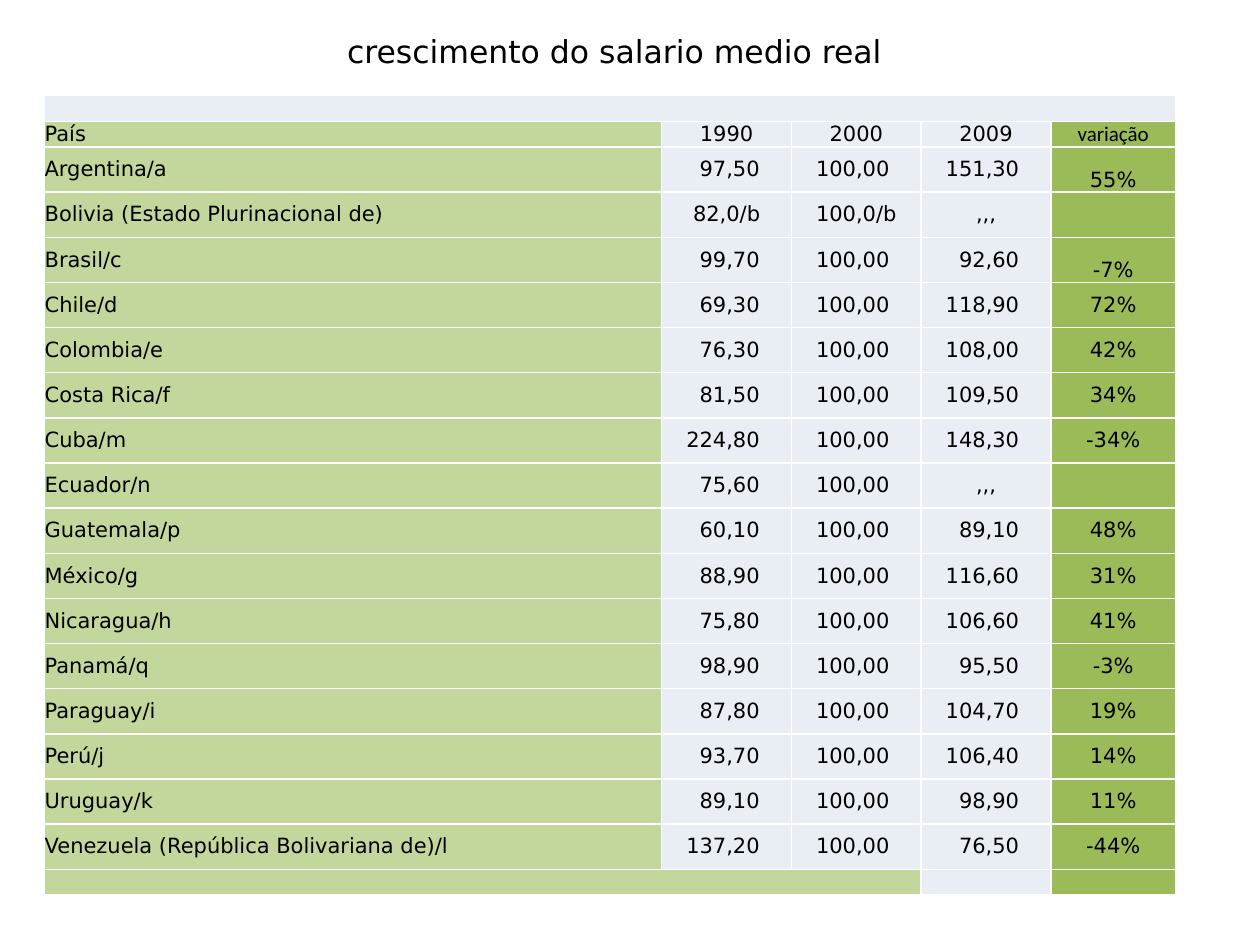
from lxml import etree
from pptx import Presentation
from pptx.dml.color import RGBColor
from pptx.enum.text import MSO_ANCHOR, PP_ALIGN
from pptx.oxml.ns import qn
from pptx.util import Cm, Pt

LEFT, CENTER, RIGHT = PP_ALIGN.LEFT, PP_ALIGN.CENTER, PP_ALIGN.RIGHT
MIDDLE, BOTTOM = MSO_ANCHOR.MIDDLE, MSO_ANCHOR.BOTTOM

BLACK, WHITE = "000000", "FFFFFF"
COUNTRY_FILL, YEAR_FILL, VARIATION_FILL = "C3D69B", "E9EDF4", "9BBB59"
COLUMN_FILLS = [COUNTRY_FILL, YEAR_FILL, YEAR_FILL, YEAR_FILL, VARIATION_FILL]
COLUMN_SHARES = [4.9, 1.03, 1.03, 1.03, 0.99]
FONT = "DejaVu Sans"
TEXT_SIZE = 12
NUMBER_INDENT = 0.64
ROW_HEIGHT, THIN_ROW_HEIGHT = 0.91, 0.48
LOW_VARIATIONS = {"variação", "55%", "-7%"}

HEADINGS = ["País", "1990", "2000", "2009", "variação"]
WAGES = [
    ["Argentina/a", "97,50", "100,00", "151,30", "55%"],
    ["Bolivia (Estado Plurinacional de)", "82,0/b", "100,0/b", ",,,", ""],
    ["Brasil/c", "99,70", "100,00", "92,60", "-7%"],
    ["Chile/d", "69,30", "100,00", "118,90", "72%"],
    ["Colombia/e", "76,30", "100,00", "108,00", "42%"],
    ["Costa Rica/f", "81,50", "100,00", "109,50", "34%"],
    ["Cuba/m", "224,80", "100,00", "148,30", "-34%"],
    ["Ecuador/n", "75,60", "100,00", ",,,", ""],
    ["Guatemala/p", "60,10", "100,00", "89,10", "48%"],
    ["México/g", "88,90", "100,00", "116,60", "31%"],
    ["Nicaragua/h", "75,80", "100,00", "106,60", "41%"],
    ["Panamá/q", "98,90", "100,00", "95,50", "-3%"],
    ["Paraguay/i", "87,80", "100,00", "104,70", "19%"],
    ["Perú/j", "93,70", "100,00", "106,40", "14%"],
    ["Uruguay/k", "89,10", "100,00", "98,90", "11%"],
    ["Venezuela (República Bolivariana de)/l", "137,20", "100,00", "76,50", "-44%"],
]


def color(hex_value):
    """Return the colour for a hex string."""
    return RGBColor.from_string(hex_value)


def apply_format(target, values):
    """Set each named attribute of the target."""
    for name, value in values.items():
        setattr(target, name, value)


def write_text(paragraph, text, align, size, font=FONT):
    """Write one run of black text into the paragraph."""
    paragraph.alignment = align
    run = paragraph.add_run()
    run.text = text
    apply_format(run.font, {"size": Pt(size), "name": font, "bold": False})
    run.font.color.rgb = color(BLACK)


def draw_borders(cell):
    """Give the cell thin white borders on all sides."""
    properties = cell._tc.get_or_add_tcPr()
    for side in ("a:lnL", "a:lnR", "a:lnT", "a:lnB"):
        line = etree.SubElement(properties, qn(side), w=str(Pt(1)))
        fill = etree.SubElement(line, qn("a:solidFill"))
        etree.SubElement(fill, qn("a:srgbClr"), val=WHITE)


def fill_cell(cell, text, column, fill):
    """Style one cell and write its text."""
    is_number = 0 < column < 4 and text.endswith("0") and "," in text
    apply_format(cell, {
        "margin_left": 0,
        "margin_right": Cm(NUMBER_INDENT) if is_number else 0,
        "margin_top": 0,
        "margin_bottom": 0,
        "vertical_anchor": BOTTOM if text in LOW_VARIATIONS else MIDDLE,
    })
    draw_borders(cell)
    cell.fill.solid()
    cell.fill.fore_color.rgb = color(fill)
    paragraph = cell.text_frame.paragraphs[0]
    if not text:
        etree.SubElement(paragraph._p, qn("a:endParaRPr"), sz=str(TEXT_SIZE * 100))
        return
    align = LEFT if column == 0 else RIGHT if is_number else CENTER
    font = "Calibri" if text == HEADINGS[-1] else FONT
    write_text(paragraph, text, align, TEXT_SIZE, font)


def add_title(slide, left, top, width, height):
    """Place the slide title in the given box."""
    frame = slide.shapes.add_textbox(Cm(left), Cm(top), Cm(width), Cm(height)).text_frame
    frame.word_wrap = True
    write_text(frame.paragraphs[0], "crescimento do salario medio real", CENTER, 18)


def add_wage_table(slide, left, top, width, height):
    """Place the wage table in the given box."""
    blank = [""] * len(HEADINGS)
    rows = [blank, HEADINGS, *WAGES, blank]
    table = slide.shapes.add_table(
        len(rows), len(HEADINGS), Cm(left), Cm(top), Cm(width), Cm(height)
    ).table
    apply_format(table, {"first_row": False, "horz_banding": False})
    for column, share in zip(table.columns, COLUMN_SHARES):
        column.width = Cm(width * share / sum(COLUMN_SHARES))
    for row_index, texts in enumerate(rows):
        is_wage = texts in WAGES
        table.rows[row_index].height = Cm(ROW_HEIGHT if is_wage else THIN_ROW_HEIGHT)
        fills = COLUMN_FILLS if row_index else [YEAR_FILL] * len(HEADINGS)
        for column_index, (text, fill) in enumerate(zip(texts, fills)):
            fill_cell(table.cell(row_index, column_index), text, column_index, fill)
    last = len(rows) - 1
    table.cell(0, 0).merge(table.cell(0, 4))
    table.cell(last, 0).merge(table.cell(last, 2))


def main():
    """Build the slide and save it."""
    presentation = Presentation()
    apply_format(presentation, {"slide_width": Cm(25.4), "slide_height": Cm(19.05)})
    slide = presentation.slides.add_slide(presentation.slide_layouts[6])
    add_wage_table(slide, 0.9, 1.93, 22.8, 16.02)
    add_title(slide, 4.29, 0.53, 16.2, 1.02)
    presentation.save("out.pptx")


if __name__ == "__main__":
    main()
